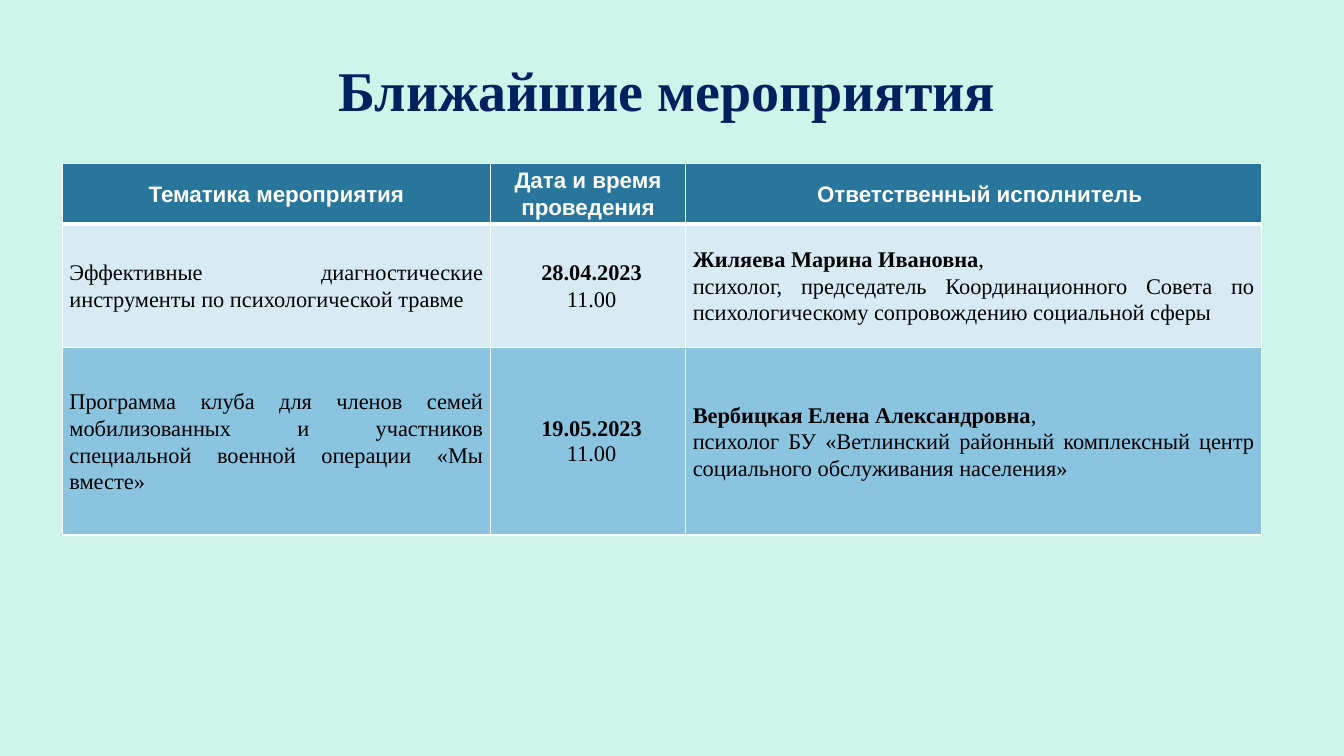
"""Build a slide with a table of upcoming events."""
from dataclasses import dataclass

from lxml import etree
from pptx import Presentation
from pptx import util as u
from pptx.dml.color import RGBColor
from pptx.enum import text
from pptx.oxml import ns


@dataclass(frozen=True)
class Theme:
    background: str = "CFF4EA"
    title: str = "002060"
    header: str = "29769D"
    light_row: str = "D8EBF5"
    dark_row: str = "8BC4E0"
    ink: str = "000000"
    white: str = "FFFFFF"
    serif: str = "Times New Roman"
    sans: str = "Arial"
    title_size: int = 40
    table_size: int = 16


@dataclass(frozen=True)
class Style:
    font: str
    size: int
    color: str


@dataclass(frozen=True)
class Span:
    words: str
    bold: bool = False


@dataclass(frozen=True)
class Entry:
    lines: tuple[tuple[Span, ...], ...]
    align: text.PP_ALIGN = text.PP_ALIGN.JUSTIFY
    indent: float = 0
    spacing: float = 1.07


@dataclass(frozen=True)
class Row:
    height: float
    fill: str
    style: Style
    top: int
    bottom: int
    entries: tuple[Entry, ...]


THEME = Theme()
TITLE = Style(THEME.serif, THEME.title_size, THEME.title)
HEADER = Style(THEME.sans, THEME.table_size, THEME.white)
BODY = Style(THEME.serif, THEME.table_size, THEME.ink)
COLUMNS = (10.79, 4.92, 14.52)


def heading(words: str, indent: float = 0, spacing: float = 1.07) -> Entry:
    return Entry(((Span(words, True),),), text.PP_ALIGN.CENTER, indent, spacing)


def topic(words: str) -> Entry:
    return Entry(((Span(words),),))


def moment(date: str, time: str, spacing: float) -> Entry:
    lines = ((Span(date, True),), (Span(time),))
    return Entry(lines, text.PP_ALIGN.CENTER, 0.18, spacing)


def person(name: str, post: str) -> Entry:
    return Entry(((Span(name, True), Span(",")), (Span(post),)))


ROWS = (
    Row(1.52, THEME.header, HEADER, 1, 3, (
        heading("Тематика мероприятия"),
        heading("Дата и время проведения"),
        heading("Ответственный исполнитель", 0.3),
    )),
    Row(3.12, THEME.light_row, BODY, 3, 1, (
        topic("Эффективные диагностические инструменты по психологической травме"),
        moment("28.04.2023", "11.00", 1.07),
        person("Жиляева Марина Ивановна",
               "психолог, председатель Координационного Совета по "
               "психологическому сопровождению социальной сферы"),
    )),
    Row(4.72, THEME.dark_row, BODY, 1, 1, (
        topic("Программа клуба для членов семей мобилизованных и участников "
              "специальной военной операции «Мы вместе»"),
        moment("19.05.2023", "11.00", 1.0),
        person("Вербицкая Елена Александровна",
               "психолог БУ «Ветлинский районный комплексный центр "
               "социального обслуживания населения»"),
    )),
)


def write(frame, entry: Entry, style: Style) -> None:
    frame.word_wrap = True
    frame.text = "\n".join("".join(span.words for span in line) for line in entry.lines)
    for para, line in zip(frame.paragraphs, entry.lines):
        para.text = line[0].words
        for span in line[1:]:
            para.add_run().text = span.words
        para.alignment = entry.align
        para.line_spacing = entry.spacing
        if entry.indent:
            para._p.get_or_add_pPr().set("indent", str(int(u.Cm(entry.indent))))
        for run, span in zip(para.runs, line):
            run.font.name = style.font
            run.font.size = u.Pt(style.size)
            run.font.bold = span.bold
            run.font.color.rgb = RGBColor.from_string(style.color)


def add_borders(cell, top: int, bottom: int) -> None:
    properties = cell._tc.get_or_add_tcPr()
    widths = {"a:lnL": 1, "a:lnR": 1, "a:lnT": top, "a:lnB": bottom}
    for index, (tag, width) in enumerate(widths.items()):
        line = etree.Element(ns.qn(tag), w=str(int(u.Pt(width))))
        fill = etree.SubElement(line, ns.qn("a:solidFill"))
        etree.SubElement(fill, ns.qn("a:srgbClr"), val=THEME.white)
        properties.insert(index, line)


def add_title(page) -> None:
    box = page.shapes.add_textbox(u.Cm(2.2), u.Cm(0.94), u.Cm(29.21), u.Cm(2.82))
    box.text_frame.vertical_anchor = text.MSO_ANCHOR.MIDDLE
    write(box.text_frame, heading("Ближайшие мероприятия", spacing=0.9), TITLE)


def add_events(page) -> None:
    width, height = sum(COLUMNS), sum(row.height for row in ROWS)
    table = page.shapes.add_table(len(ROWS), len(COLUMNS), u.Cm(1.57), u.Cm(4.12),
                                  u.Cm(width), u.Cm(height)).table
    table.horz_banding = False
    for column, size in zip(table.columns, COLUMNS):
        column.width = u.Cm(size)
    for line, row in zip(table.rows, ROWS):
        line.height = u.Cm(row.height)
        for cell, entry in zip(line.cells, row.entries):
            cell.fill.solid()
            cell.fill.fore_color.rgb = RGBColor.from_string(row.fill)
            cell.vertical_anchor = text.MSO_ANCHOR.MIDDLE
            cell.margin_left = cell.margin_right = u.Cm(0.18)
            cell.margin_top = cell.margin_bottom = 0
            write(cell.text_frame, entry, row.style)
            add_borders(cell, row.top, row.bottom)


def main() -> None:
    deck = Presentation()
    deck.slide_width, deck.slide_height = u.Cm(33.87), u.Cm(19.05)
    page = deck.slides.add_slide(deck.slide_layouts[6])
    page.background.fill.solid()
    page.background.fill.fore_color.rgb = RGBColor.from_string(THEME.background)
    add_title(page)
    add_events(page)
    deck.save("out.pptx")


if __name__ == "__main__":
    main()
